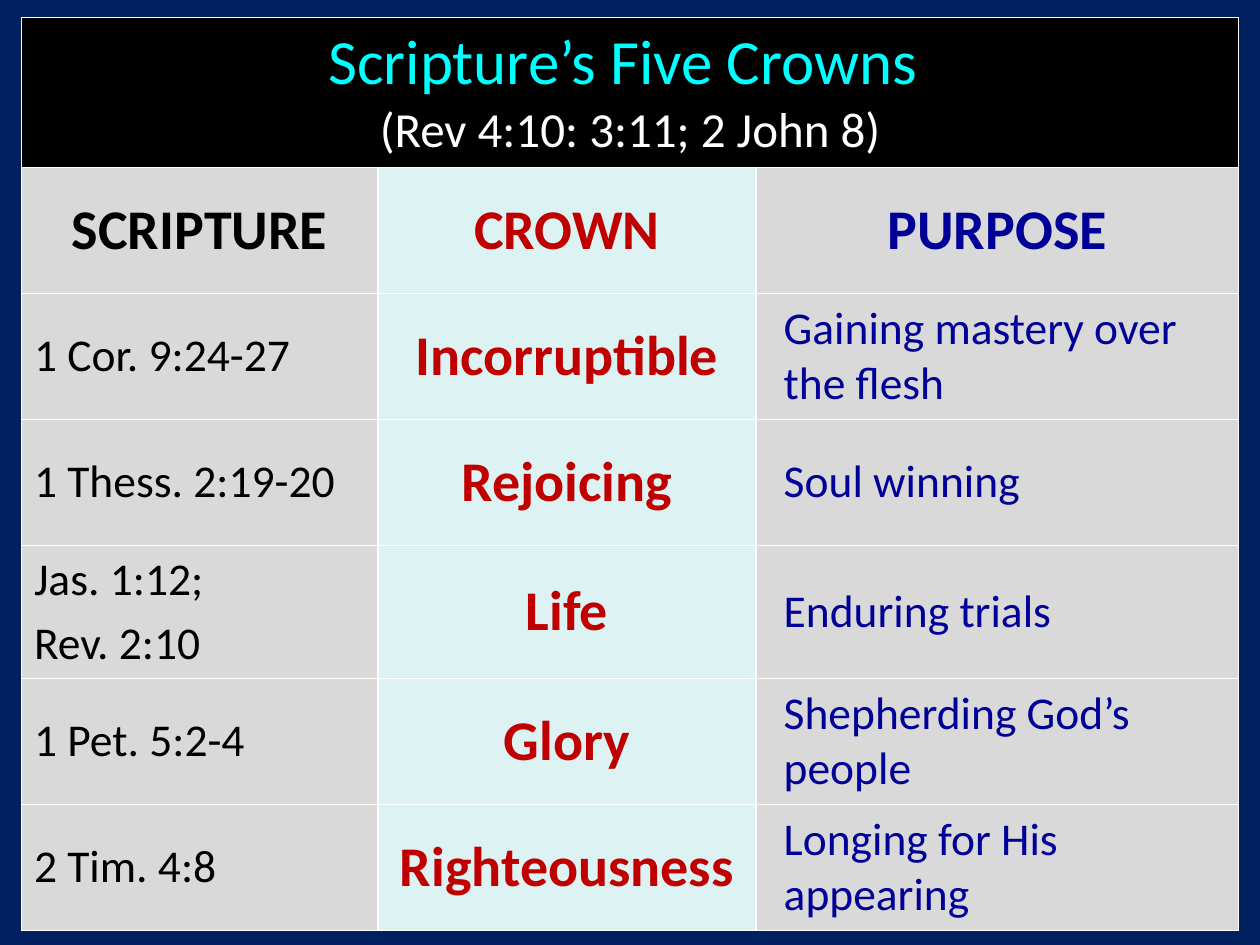
from lxml.etree import SubElement
from pptx import Presentation
from pptx.dml.color import RGBColor
from pptx.enum.text import MSO_ANCHOR, PP_ALIGN
from pptx.oxml.ns import qn
from pptx.util import Pt

# Content
TITLE = "Scripture’s Five Crowns \v(Rev 4:10: 3:11; 2 John 8)"
HEADS = ("SCRIPTURE", "CROWN", "PURPOSE")
CROWNS = [
    ("1 Cor. 9:24-27", "Incorruptible", "Gaining mastery over the flesh"),
    ("1 Thess. 2:19-20", "Rejoicing", "Soul winning"),
    ("Jas. 1:12;\nRev. 2:10", "Life", "Enduring trials"),
    ("1 Pet. 5:2-4", "Glory", "Shepherding God’s people"),
    ("2 Tim. 4:8", "Righteousness", "Longing for His appearing"),
]

# Colours
NAVY = RGBColor(0x00, 0x20, 0x60)
BLACK = RGBColor(0x00, 0x00, 0x00)
WHITE = RGBColor(0xFF, 0xFF, 0xFF)
CYAN = RGBColor(0x00, 0xFF, 0xFF)
GREY = RGBColor(0xD9, 0xD9, 0xD9)
MINT = RGBColor(0xDD, 0xF3, 0xF3)
RED = RGBColor(0xC0, 0x00, 0x00)
BLUE = RGBColor(0x00, 0x00, 0x99)

# Columns: width, fill, ink, left indent of the body text
COLS = [(203.76, GREY, BLACK, 0), (216, MINT, RED, 0), (275.76, GREY, BLUE, 8.64)]
TOP, ROW = 54, 72
FONT = "Calibri"


def edge(cell):
    """Draw a thin white line on all four sides."""
    props = cell._tc.get_or_add_tcPr()
    for i, side in enumerate(("a:lnL", "a:lnR", "a:lnT", "a:lnB")):
        line = SubElement(props, qn(side), w=str(Pt(1)))
        fill = SubElement(line, qn("a:solidFill"))
        SubElement(fill, qn("a:srgbClr"), val=str(WHITE))
        props.insert(i, line)


def fill_cell(cell, text, back, styles, bold=False, mid=True, indent=0):
    """Set the text; styles holds a size and colour for each run."""
    cell.fill.solid()
    cell.fill.fore_color.rgb = back
    cell.vertical_anchor = MSO_ANCHOR.MIDDLE
    cell.text_frame.text = text
    for para in cell.text_frame.paragraphs:
        para.alignment = PP_ALIGN.CENTER if mid else PP_ALIGN.LEFT
        props = para._p.get_or_add_pPr()
        props.set("marL", str(Pt(indent)))
        gap = SubElement(props, qn("a:spcBef"))
        SubElement(gap, qn("a:spcPct"), val="20000")
        for run, (size, ink) in zip(para.runs, styles):
            run.font.name = FONT
            run.font.size = Pt(size)
            run.font.bold = bold
            run.font.color.rgb = ink


# Slide
deck = Presentation()
deck.slide_width, deck.slide_height = Pt(720), Pt(540)
slide = deck.slides.add_slide(deck.slide_layouts[6])
slide.background.fill.solid()
slide.background.fill.fore_color.rgb = NAVY

# Table grid
count = len(CROWNS) + 2
wide = sum(col[0] for col in COLS)
table = slide.shapes.add_table(
    count, len(COLS), Pt(12.24), Pt(10.08), Pt(wide), Pt(TOP + ROW * (count - 1))
).table
for col, (width, *_) in zip(table.columns, COLS):
    col.width = Pt(width)
for i, row in enumerate(table.rows):
    row.height = Pt(ROW if i else TOP)
for cell in table.iter_cells():
    edge(cell)

# Title row
table.cell(0, 0).merge(table.cell(0, len(COLS) - 1))
fill_cell(table.cell(0, 0), TITLE, BLACK, [(36, CYAN), (28, WHITE)])

# Heads and crowns
for r, words in enumerate([HEADS, *CROWNS], 1):
    for c, (text, (_, back, ink, indent)) in enumerate(zip(words, COLS)):
        loud = r == 1 or c == 1
        fill_cell(table.cell(r, c), text, back, [(32 if loud else 26, ink)],
                  bold=loud, mid=loud, indent=0 if loud else indent)

deck.save("out.pptx")
